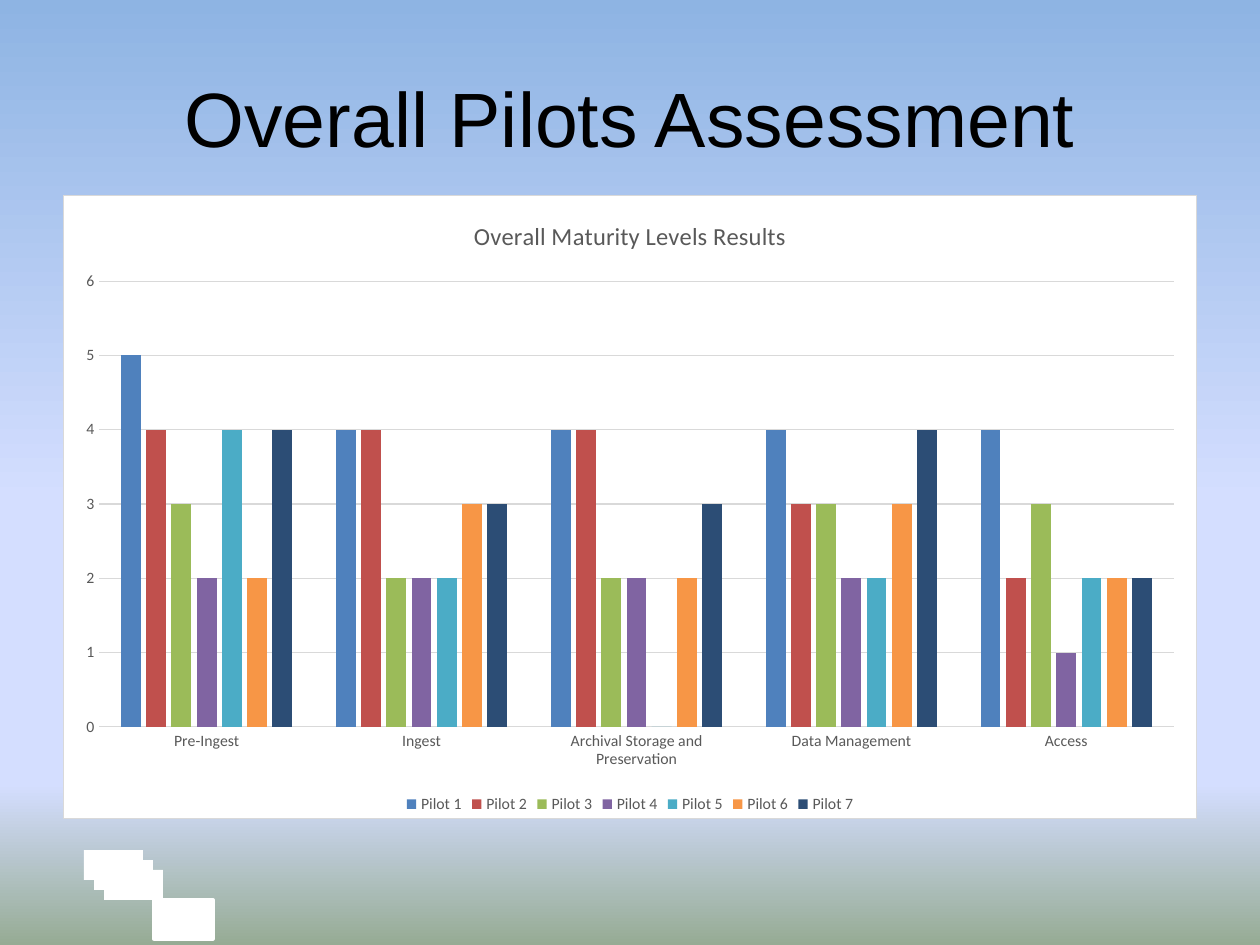
from copy import deepcopy

from lxml import etree
from pptx import Presentation
from pptx.chart.data import CategoryChartData
from pptx.dml.color import RGBColor
from pptx.enum.chart import XL_CHART_TYPE, XL_LEGEND_POSITION, XL_TICK_MARK
from pptx.enum.shapes import MSO_SHAPE
from pptx.enum.text import MSO_ANCHOR, PP_ALIGN
from pptx.oxml.ns import qn
from pptx.util import Pt

PX = 914400 / 126
WHITE = RGBColor(0xFF, 0xFF, 0xFF)
BLACK = RGBColor(0x00, 0x00, 0x00)
GREY = RGBColor(0x59, 0x59, 0x59)
LIGHT_GREY = RGBColor(0xD9, 0xD9, 0xD9)
SKY = RGBColor(0x8E, 0xB4, 0xE3)
HAZE = RGBColor(0xD4, 0xDE, 0xFF)
GRASS = RGBColor(0x96, 0xAB, 0x94)

STAGES = ["Pre-Ingest", "Ingest", "Archival Storage and Preservation",
          "Data Management", "Access"]
PILOTS = [
    ([5, 4, 4, 4, 4], RGBColor(0x4F, 0x81, 0xBD)),
    ([4, 4, 4, 3, 2], RGBColor(0xC0, 0x50, 0x4D)),
    ([3, 2, 2, 3, 3], RGBColor(0x9B, 0xBB, 0x59)),
    ([2, 2, 2, 2, 1], RGBColor(0x80, 0x64, 0xA2)),
    ([4, 2, 0, 2, 2], RGBColor(0x4B, 0xAC, 0xC6)),
    ([2, 3, 2, 3, 2], RGBColor(0xF7, 0x96, 0x46)),
    ([4, 3, 3, 4, 2], RGBColor(0x2C, 0x4D, 0x75)),
]


def px(*lengths):
    return [round(length * PX) for length in lengths]


def style_font(font, name, size, color):
    font.name = name
    font.size = Pt(size)
    font.color.rgb = color


prs = Presentation()
prs.slide_width, prs.slide_height = px(1260, 945)
slide = prs.slides.add_slide(prs.slide_layouts[6])

# Background gradient, top to bottom
background = slide.background.fill
background.gradient()
background.gradient_angle = 270
stop_list = slide.element.find(".//" + qn("a:gsLst"))
for _ in range(2):
    stop_list.append(deepcopy(stop_list[0]))
backdrop = [(0, SKY), (0.53, HAZE), (0.83, HAZE), (1, GRASS)]
for stop, (position, color) in zip(background.gradient_stops, backdrop):
    stop.position = position
    stop.color.rgb = color

# White blocks in the lower left corner
blocks = [(154, 900, 59, 39)] + [(84 + 10 * i, 850 + 10 * i, 59, 30) for i in (2, 1, 0)]
for i, bounds in enumerate(blocks):
    block = slide.shapes.add_shape(MSO_SHAPE.RECTANGLE, *px(*bounds))
    block.shadow.inherit = False
    block.fill.solid()
    block.fill.fore_color.rgb = WHITE
    if i == 0:
        block.line.color.rgb = WHITE
        block.line.width = Pt(2)
    else:
        block.line.fill.background()

# Heading
heading = slide.shapes.add_textbox(*px(63, 38, 1134, 158)).text_frame
heading.word_wrap = True
heading.vertical_anchor = MSO_ANCHOR.MIDDLE
heading.text = "Overall Pilots Assessment"
heading.paragraphs[0].alignment = PP_ALIGN.CENTER
style_font(heading.paragraphs[0].font, "Arial", 44, BLACK)

# Maturity chart
maturity = CategoryChartData()
maturity.categories = STAGES
for number, (levels, _) in enumerate(PILOTS, 1):
    maturity.add_series(f"Pilot {number}", levels)
chart = slide.shapes.add_chart(
    XL_CHART_TYPE.COLUMN_CLUSTERED, *px(63, 195, 1134, 624), maturity).chart
style_font(chart.font, "Calibri", 10, BLACK)

chart.has_title = True
chart_title = chart.chart_title.text_frame
chart_title.text = "Overall Maturity Levels Results"
style_font(chart_title.paragraphs[0].font, "Calibri", 14, GREY)
chart_title.paragraphs[0].font.bold = False
chart.chart_title.include_in_layout = False

chart.has_legend = True
chart.legend.position = XL_LEGEND_POSITION.BOTTOM
chart.legend.include_in_layout = False
style_font(chart.legend.font, "Calibri", 9, GREY)

plot = chart.plots[0]
plot.gap_width = 219
plot.overlap = -27
plot.vary_by_categories = False
for series, (_, color) in zip(plot.series, PILOTS):
    series.format.fill.solid()
    series.format.fill.fore_color.rgb = color

stage_axis, level_axis = chart.category_axis, chart.value_axis
for axis in (stage_axis, level_axis):
    axis.major_tick_mark = axis.minor_tick_mark = XL_TICK_MARK.NONE
    style_font(axis.tick_labels.font, "Calibri", 9, GREY)
level_axis.minimum_scale = 0
level_axis.maximum_scale = 6
level_axis.major_unit = 1
level_axis.has_major_gridlines = True
level_axis.format.line.fill.background()
for line in (stage_axis.format.line, level_axis.major_gridlines.format.line):
    line.color.rgb = LIGHT_GREY
    line.width = Pt(0.75)

# Chart area: white with a thin grey border
area = etree.Element(qn("c:spPr"))
border = etree.Element(qn("a:ln"), w=str(Pt(0.75)))
for parent, color in ((area, WHITE), (border, LIGHT_GREY)):
    solid = etree.SubElement(parent, qn("a:solidFill"))
    etree.SubElement(solid, qn("a:srgbClr"), val=str(color))
area.append(border)
chart.element.find(qn("c:chart")).addnext(area)

prs.save("out.pptx")
